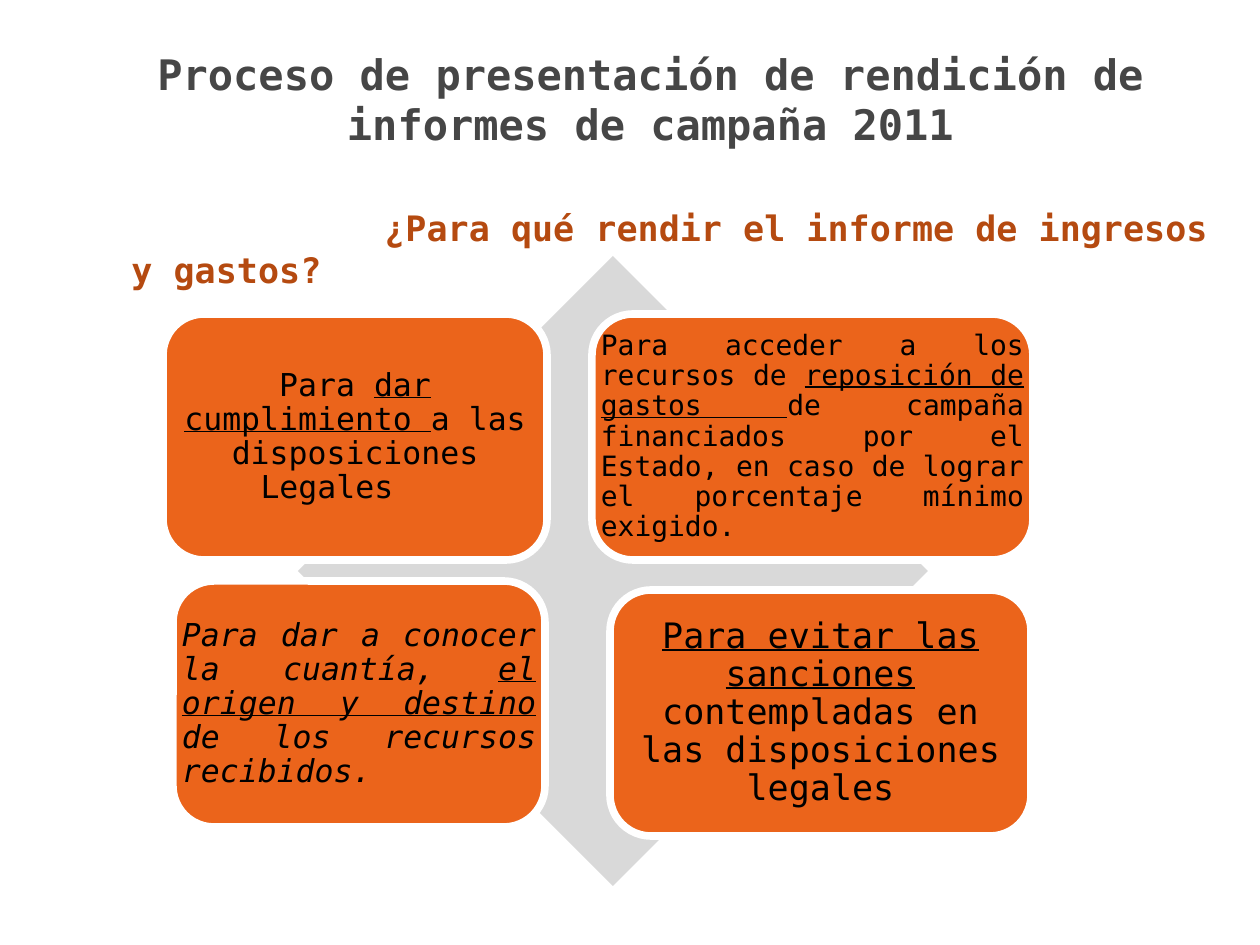
from pptx import Presentation
from pptx.dml.color import RGBColor
from pptx.enum.shapes import MSO_SHAPE as Shape
from pptx.enum.text import MSO_ANCHOR as Anchor, PP_ALIGN as Align
from pptx.util import Pt

SCALE = 914400 / 126  # EMU per px
FONT = "DejaVu Sans Mono"
ORANGE, RUST, GREY, DARK = "EB641B", "B54A10", "D9D9D9", "464646"


def px(n):
    return round(n * SCALE)


def hue(code):
    return RGBColor.from_string(code)


def write(slide, box, text, size, color="000000", bold=False, italic=False,
          align=Align.LEFT, anchor=Anchor.TOP, pad=None, gap=None,
          left=0, first=0):
    """Add a text box; underscores in text switch underlining on and off."""
    frame = slide.shapes.add_textbox(*map(px, box)).text_frame
    frame.word_wrap = True
    frame.vertical_anchor = anchor
    if pad is not None:
        frame.margin_left = frame.margin_right = px(pad)
        frame.margin_top = frame.margin_bottom = px(pad)
    para = frame.paragraphs[0]
    para.alignment = align
    if gap:
        para.line_spacing = gap
    if left or first:
        props = para._p.get_or_add_pPr()
        props.set("marL", str(px(left)))
        props.set("indent", str(px(first)))
    for i, part in enumerate(text.split("_")):
        if not part:
            continue
        run = para.add_run()
        run.text = part
        font = run.font
        font.name, font.size = FONT, Pt(size)
        font.bold, font.italic, font.underline = bold, italic, i % 2 == 1
        font.color.rgb = hue(color)


def draw(slide, kind, box, fill, edge=None):
    shape = slide.shapes.add_shape(kind, *map(px, box))
    shape.shadow.inherit = False
    shape.fill.solid()
    shape.fill.fore_color.rgb = hue(fill)
    if edge:
        shape.line.color.rgb = hue(edge)
        shape.line.width = Pt(4.33)
    else:
        shape.line.fill.background()


def head(slide, box):
    x, y, w, h = box
    # Title
    write(slide, (x + 80, y, 1071, 197), "Proceso de presentación de rendición "
          "de informes de campaña 2011", 24, DARK, bold=True,
          align=Align.CENTER, anchor=Anchor.MIDDLE)
    # Question, with a deep first-line indent
    write(slide, (x, y + 200, w, h - 200),
          "¿Para qué rendir el informe de ingresos y gastos?", 20, RUST,
          bold=True, left=84, first=253)


def matrix(slide, box):
    x, y, w, h = box
    # Diamond behind the cards
    draw(slide, Shape.DIAMOND, (x + 135, y, 630, h), GREY)
    # Cards: left, top, width, text, size, format
    mid, full = Align.CENTER, Align.JUSTIFY
    cards = [
        (0, 58, 384, "Para _dar cumplimiento _a las disposiciones Legales\t",
         18, dict(align=mid, pad=9)),
        (429, 58, 441, "Para acceder a los recursos de _reposición de gastos "
         "_de campaña financiados por el Estado, en caso de lograr el "
         "porcentaje mínimo exigido.", 16, dict(align=full, pad=9)),
        (10, 325, 372, "Para dar a conocer la cuantía, _el origen y destino "
         "_de los recursos recibidos.", 18,
         dict(align=full, pad=9, italic=True)),
        (447, 334, 421, "_Para evitar las sanciones _contempladas en las "
         "disposiciones legales", 20, dict(align=mid, pad=10)),
    ]
    for left, top, wide, text, size, form in cards:
        card = (x + left, y + top, wide, 246)
        draw(slide, Shape.ROUNDED_RECTANGLE, card, ORANGE, "FFFFFF")
        write(slide, card, text, size, anchor=Anchor.MIDDLE, gap=0.9, **form)


def main():
    deck = Presentation()
    deck.slide_width, deck.slide_height = px(1260), px(945)
    slide = deck.slides.add_slide(deck.slide_layouts[6])
    head(slide, (35, 0, 1191, 300))
    matrix(slide, (163, 256, 870, 630))
    deck.save("out.pptx")


if __name__ == "__main__":
    main()
